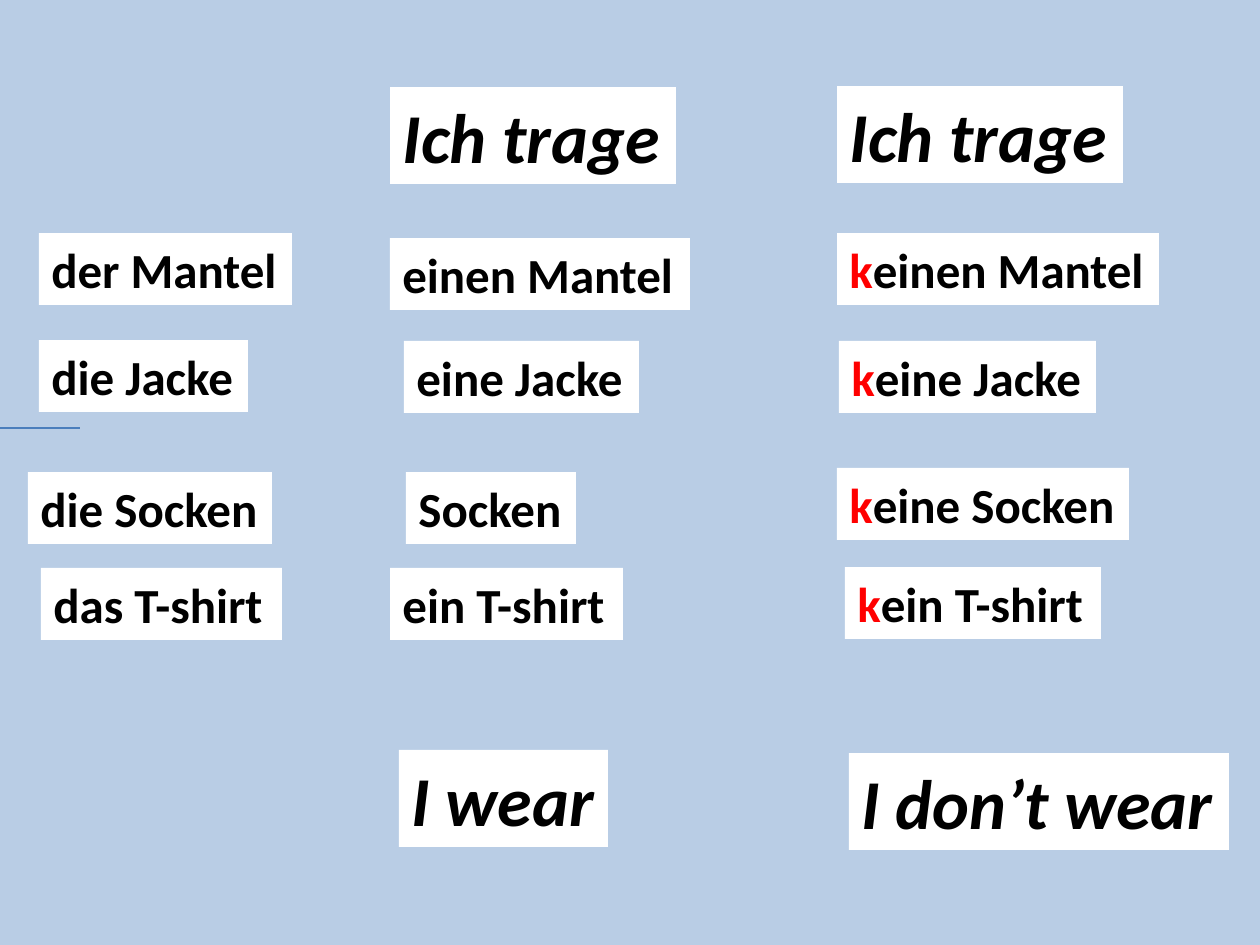
"""Build the slide on wearing and not wearing clothes in German."""
from lxml.etree import SubElement
from pptx import Presentation
from pptx.dml.color import RGBColor
from pptx.enum.shapes import MSO_CONNECTOR as Link
from pptx.enum.text import MSO_AUTO_SIZE as Fit, MSO_ANCHOR as Anchor
from pptx.oxml.ns import qn
from pptx.util import Emu, Pt

SKY = RGBColor(0xB9, 0xCD, 0xE5)
WHITE = RGBColor(0xFF, 0xFF, 0xFF)
BLACK = RGBColor(0x00, 0x00, 0x00)
RED = RGBColor(0xFF, 0x00, 0x00)
BLUE = RGBColor(0x4B, 0x7E, 0xBC)

WORD = {"name": "Calibri", "size": Pt(28), "bold": True, "italic": False}
HEAD = {**WORD, "size": Pt(40), "italic": True}
TALL = {"word": 72, "head": 97}

# NOUNS, WEAR, NOT_WEAR: (prefix, text, left, top, width)
NOUNS = [
    ("", "der Mantel", 39, 233, 253),
    ("", "die Jacke", 39, 340, 209),
    ("", "die Socken", 28, 472, 244),
    ("", "das T-shirt", 41, 568, 241),
]
WEAR = [
    ("", "einen Mantel", 390, 238, 300),
    ("", "eine Jacke", 404, 341, 235),
    ("", "Socken", 406, 472, 170),
    ("", "ein T-shirt", 390, 568, 233),
]
NOT_WEAR = [
    ("k", "einen Mantel", 837, 233, 322),
    ("k", "eine Jacke", 839, 341, 257),
    ("k", "eine Socken", 837, 468, 292),
    ("k", "ein T-shirt", 845, 567, 256),
]
HEADS = [
    ("", "Ich trage", 390, 87, 286),
    ("", "Ich trage", 837, 86, 286),
    ("", "I wear", 399, 750, 209),
    ("", "I don’t wear", 849, 753, 380),
]


def px(num):
    """Turn pixels into EMU."""
    return Emu(round(num * 914400 / 126))


def add_card(slide, card, tall, style):
    """Add one white card with an optional red prefix."""
    prefix, text, left, top, wide = card
    box = slide.shapes.add_textbox(px(left), px(top), px(wide), px(tall))
    box.fill.solid()
    box.fill.fore_color.rgb = WHITE
    frame = box.text_frame
    look = {"word_wrap": False, "auto_size": Fit.SHAPE_TO_FIT_TEXT,
            "vertical_anchor": Anchor.TOP}
    for key, value in look.items():
        setattr(frame, key, value)
    for part, color in ((prefix, RED), (text, BLACK)):
        if part:
            run = frame.paragraphs[0].add_run()
            run.text = part
            for key, value in style.items():
                setattr(run.font, key, value)
            run.font.color.rgb = color


def add_rule(slide):
    """Add the short line at the left edge."""
    rule = slide.shapes.add_connector(
        Link.STRAIGHT, px(80), px(428), px(0), px(428))
    rule.line.color.rgb = BLUE
    rule.line.width = Pt(0.75)
    SubElement(rule._element.spPr, qn("a:effectLst"))


def main():
    """Build and save the deck."""
    deck = Presentation()
    deck.slide_width, deck.slide_height = px(1260), px(945)
    slide = deck.slides.add_slide(deck.slide_layouts[6])
    slide.background.fill.solid()
    slide.background.fill.fore_color.rgb = SKY
    add_rule(slide)
    for card in NOUNS + WEAR + NOT_WEAR:
        add_card(slide, card, TALL["word"], WORD)
    for card in HEADS:
        add_card(slide, card, TALL["head"], HEAD)
    deck.save("out.pptx")


if __name__ == "__main__":
    main()
